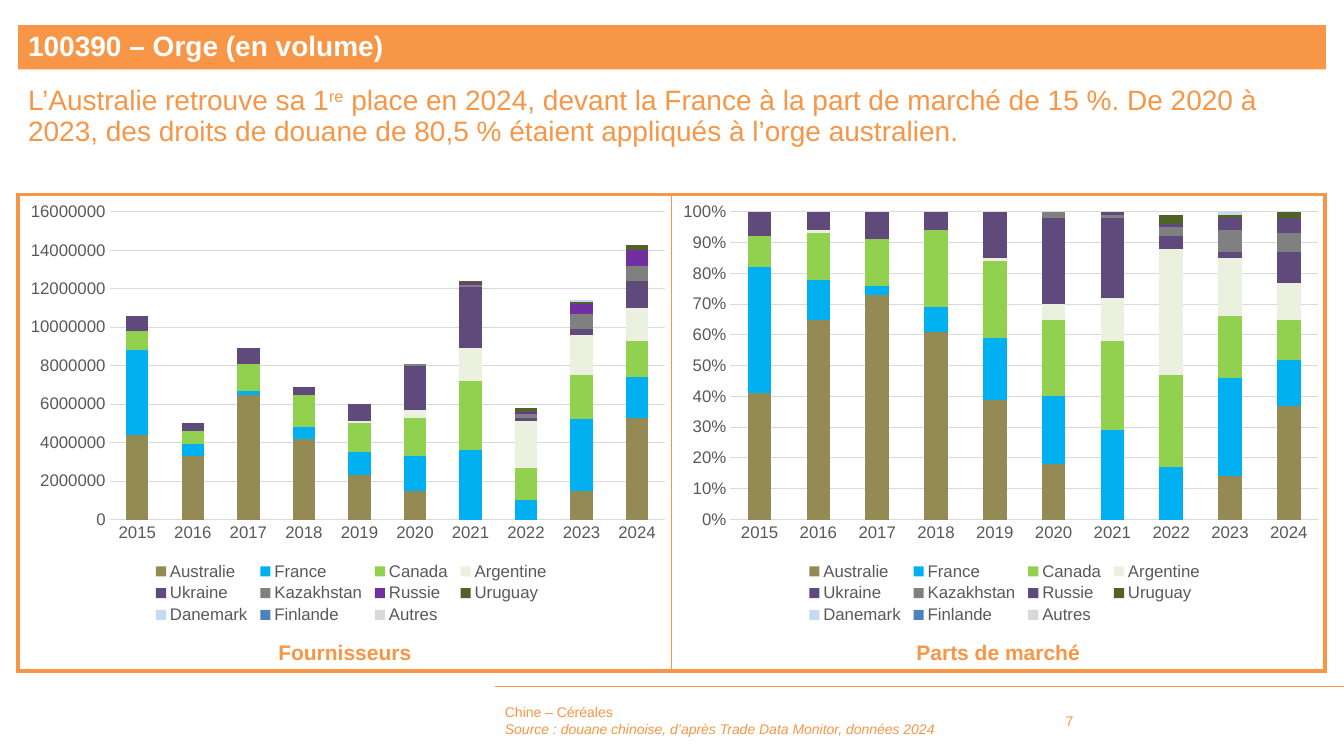
from dataclasses import dataclass

from lxml.etree import SubElement
from pptx import Presentation
from pptx.chart.data import CategoryChartData
from pptx.dml.color import RGBColor
from pptx.enum.chart import XL_CHART_TYPE, XL_LEGEND_POSITION, XL_TICK_MARK
from pptx.enum.shapes import MSO_CONNECTOR, MSO_SHAPE
from pptx.enum.text import MSO_ANCHOR, PP_ALIGN
from pptx.oxml import parse_xml
from pptx.oxml.ns import nsdecls, qn
from pptx.util import Inches, Pt

YEARS = [str(year) for year in range(2015, 2025)]
NONE = [0] * len(YEARS)
MILLION = 1_000_000
SUPPLIERS = {
    "Australie": "948A54",
    "France": "00B0F0",
    "Canada": "92D050",
    "Argentine": "EBF1DE",
    "Ukraine": "604A7B",
    "Kazakhstan": "808080",
    "Russie": "7030A0",
    "Uruguay": "4F6228",
    "Danemark": "C6D9F1",
    "Finlande": "4F81BD",
    "Autres": "D9D9D9",
}
MILLIONS = [
    [4.4, 3.3, 6.5, 4.2, 2.3, 1.5, 0, 0, 1.5, 5.3],
    [4.4, 0.6, 0.2, 0.6, 1.2, 1.8, 3.6, 1, 3.7, 2.1],
    [1, 0.7, 1.4, 1.7, 1.5, 2, 3.6, 1.7, 2.3, 1.9],
    [0, 0, 0, 0, 0.1, 0.4, 1.7, 2.4, 2.1, 1.7],
    [0.8, 0.4, 0.8, 0.4, 0.9, 2.3, 3.2, 0.2, 0.3, 1.4],
    [0, 0, 0, 0, 0, 0.1, 0.1, 0.2, 0.8, 0.8],
    [0, 0, 0, 0, 0, 0, 0.1, 0.1, 0.5, 0.8],
    [0, 0, 0, 0, 0, 0, 0.1, 0.2, 0.1, 0.3],
    [0, 0, 0, 0, 0, 0, 0, 0, 0.1, 0],
    NONE,
    NONE,
]
VOLUMES = [[round(value * MILLION) for value in row] for row in MILLIONS]
SHARES = [
    [0.41, 0.65, 0.73, 0.61, 0.39, 0.18, 0, 0, 0.14, 0.37],
    [0.41, 0.13, 0.03, 0.08, 0.2, 0.22, 0.29, 0.17, 0.32, 0.15],
    [0.1, 0.15, 0.15, 0.25, 0.25, 0.25, 0.29, 0.3, 0.2, 0.13],
    [0, 0.01, 0, 0, 0.01, 0.05, 0.14, 0.41, 0.19, 0.12],
    [0.08, 0.07, 0.09, 0.06, 0.15, 0.28, 0.26, 0.04, 0.02, 0.1],
    [0, 0, 0, 0, 0.01, 0.02, 0.01, 0.03, 0.07, 0.06],
    [0, 0, 0, 0, 0, 0, 0.01, 0.01, 0.04, 0.05],
    [0, 0, 0, 0, 0, 0, 0.01, 0.03, 0.01, 0.02],
    [0, 0, 0, 0, 0, 0, 0, 0, 0.01, 0],
    NONE,
    NONE,
]


@dataclass(frozen=True)
class Theme:
    """Colours, font and type sizes of the slide."""

    font: str = "Arial"
    accent: str = "F79646"
    white: str = "FFFFFF"
    axis_text: str = "595959"
    grid: str = "D9D9D9"
    heading: int = 20
    caption: int = 15
    chart: int = 12
    footer: int = 10


def set_layout(parent, position, left, top, width, height):
    """Fix the place of a plot area or legend as fractions of the chart."""
    for old in parent.findall(qn("c:layout")):
        parent.remove(old)
    target = '<c:layoutTarget val="inner"/>' if parent.tag == qn("c:plotArea") else ""
    parent.insert(position, parse_xml(
        f'<c:layout {nsdecls("c")}><c:manualLayout>{target}'
        '<c:xMode val="edge"/><c:yMode val="edge"/>'
        f'<c:x val="{left}"/><c:y val="{top}"/><c:w val="{width}"/><c:h val="{height}"/>'
        '</c:manualLayout></c:layout>'))


class SlideBuilder:
    """Draws styled elements on one slide."""

    def __init__(self, slide, theme):
        """Keep the slide and its theme."""
        self.shapes = slide.shapes
        self.theme = theme

    def style(self, font, size, color, bold=False):
        """Apply the theme font to a run or chart font."""
        font.name = self.theme.font
        font.size = Pt(size)
        font.bold = bold
        font.color.rgb = RGBColor.from_string(color)

    def fill_text(self, shape, paragraphs, size, color, bold=False,
                  align=PP_ALIGN.LEFT, anchor=MSO_ANCHOR.TOP, spacing=1.0):
        """Fill a shape with paragraphs, each a list of run texts."""
        frame = shape.text_frame
        frame.word_wrap = True
        frame.vertical_anchor = anchor
        for index, texts in enumerate(paragraphs):
            paragraph = frame.add_paragraph() if index else frame.paragraphs[0]
            paragraph.alignment = align
            paragraph.line_spacing = spacing
            for text in texts:
                run = paragraph.add_run()
                run.text = text
                self.style(run.font, size, color, bold)
        return frame

    def text(self, left, top, width, height, paragraphs, size, **options):
        """Add a text box in the accent colour."""
        box = self.shapes.add_textbox(Inches(left), Inches(top), Inches(width), Inches(height))
        return self.fill_text(box, paragraphs, size, self.theme.accent, **options)

    def banner(self, left, top, width, height, title):
        """Add the filled title bar."""
        bar = self.shapes.add_shape(
            MSO_SHAPE.RECTANGLE, Inches(left), Inches(top), Inches(width), Inches(height))
        bar.shadow.inherit = False
        bar.fill.solid()
        bar.fill.fore_color.rgb = RGBColor.from_string(self.theme.accent)
        bar.line.fill.background()
        self.fill_text(bar, [[title]], self.theme.heading, self.theme.white,
                       bold=True, anchor=MSO_ANCHOR.MIDDLE, spacing=0.9)

    def rule(self, start, end, top):
        """Add a thin horizontal line."""
        line = self.shapes.add_connector(
            MSO_CONNECTOR.STRAIGHT, Inches(start), Inches(top), Inches(end), Inches(top))
        line.line.color.rgb = RGBColor.from_string(self.theme.accent)
        line.line.width = Pt(0.5)
        SubElement(line._element.spPr, qn("a:effectLst"))

    def frame(self, left, top, width, height):
        """Add the two-cell table that frames the charts."""
        table = self.shapes.add_table(
            1, 2, Inches(left), Inches(top), Inches(width), Inches(height)).table
        table.first_row = table.horz_banding = False
        for cell, (left_width, right_width) in zip(table.iter_cells(), [(3, 1), (1, 3)]):
            properties = cell._tc.get_or_add_tcPr()
            borders = {"lnL": left_width, "lnR": right_width, "lnT": 3, "lnB": 3}
            for side, points in borders.items():
                border = SubElement(properties, qn(f"a:{side}"), w=str(Pt(points)))
                fill = SubElement(border, qn("a:solidFill"))
                SubElement(fill, qn("a:srgbClr"), val=self.theme.accent)
            cell.fill.background()

    def chart(self, left, top, width, height, rows, colors, number_format, plot, maximum):
        """Add a stacked column chart by supplier and year."""
        theme = self.theme
        data = CategoryChartData(number_format=number_format)
        data.categories = YEARS
        for name, values in zip(SUPPLIERS, rows):
            data.add_series(name, values)
        chart = self.shapes.add_chart(
            XL_CHART_TYPE.COLUMN_STACKED, Inches(left), Inches(top),
            Inches(width), Inches(height), data).chart
        self.style(chart.font, theme.chart, theme.axis_text)
        chart.has_title = False
        bars = chart.plots[0]
        bars.gap_width, bars.overlap = 150, 100
        bars.vary_by_categories = False
        for series, color in zip(bars.series, colors):
            series.format.fill.solid()
            series.format.fill.fore_color.rgb = RGBColor.from_string(color)
        years, values = chart.category_axis, chart.value_axis
        for axis in (years, values):
            axis.major_tick_mark = axis.minor_tick_mark = XL_TICK_MARK.NONE
            self.style(axis.tick_labels.font, theme.chart, theme.axis_text)
        values.minimum_scale, values.maximum_scale = 0, maximum
        values.major_unit = maximum / (8 if maximum > 1 else 10)
        values.tick_labels.number_format = number_format
        values.tick_labels.number_format_is_linked = False
        values.format.line.fill.background()
        for line in (years.format.line, values.major_gridlines.format.line):
            line.color.rgb = RGBColor.from_string(theme.grid)
            line.width = Pt(0.75)
        chart.has_legend = True
        chart.legend.position = XL_LEGEND_POSITION.BOTTOM
        chart.legend.include_in_layout = False
        self.style(chart.legend.font, theme.chart, theme.axis_text)
        set_layout(chart._chartSpace.chart.plotArea, 0, *plot)
        set_layout(chart.legend._element, 1, 0.2, 0.84, 0.62, 0.16)


def main():
    """Build and save the barley imports slide."""
    presentation = Presentation()
    presentation.slide_width, presentation.slide_height = Inches(13.33), Inches(7.5)
    theme = Theme()
    builder = SlideBuilder(presentation.slides.add_slide(presentation.slide_layouts[6]), theme)
    left, top, half = 0.18, 1.93, 6.48
    builder.rule(4.91, 13.33, 6.81)
    builder.frame(left, top, 2 * half, 4.73)
    for index, caption in enumerate(["Fournisseurs", "Parts de marché"]):
        builder.text(left + index * half, 6.3, half, 0.35, [[caption]], theme.caption,
                     bold=True, align=PP_ALIGN.CENTER)
    source = "Source : douane chinoise, d’après Trade Data Monitor, données 2024"
    footer = builder.text(4.91, 6.95, 5.43, 0.4, [["Chine – Céréales"], [source]],
                          theme.footer, anchor=MSO_ANCHOR.MIDDLE)
    footer.paragraphs[1].runs[0].font.italic = True
    builder.text(10.47, 6.95, 0.99, 0.4, [["7"]], theme.footer, anchor=MSO_ANCHOR.MIDDLE)
    builder.banner(left, 0.25, 12.97, 0.44, "100390 – Orge (en volume)")
    message = ["L’Australie retrouve sa 1", "re",
               " place en 2024, devant la France à la part de marché de 15 %. De 2020 à 2023, "
               "des droits de douane de 80,5 % étaient appliqués à l’orge australien."]
    summary = builder.text(left, 0.81, 2 * half, 0.77, [message], theme.heading, spacing=0.9)
    summary.paragraphs[0].runs[1].font._element.set("baseline", "30000")
    share_colors = {**SUPPLIERS, "Russie": SUPPLIERS["Ukraine"]}
    builder.chart(left, top, half, 4.3, VOLUMES, SUPPLIERS.values(), "General",
                  (0.14, 0.04, 0.85, 0.71), 16 * MILLION)
    builder.chart(left + half, top, half, 4.3, SHARES, share_colors.values(), "0%",
                  (0.09, 0.04, 0.9, 0.71), 1)
    presentation.save("out.pptx")


if __name__ == "__main__":
    main()
